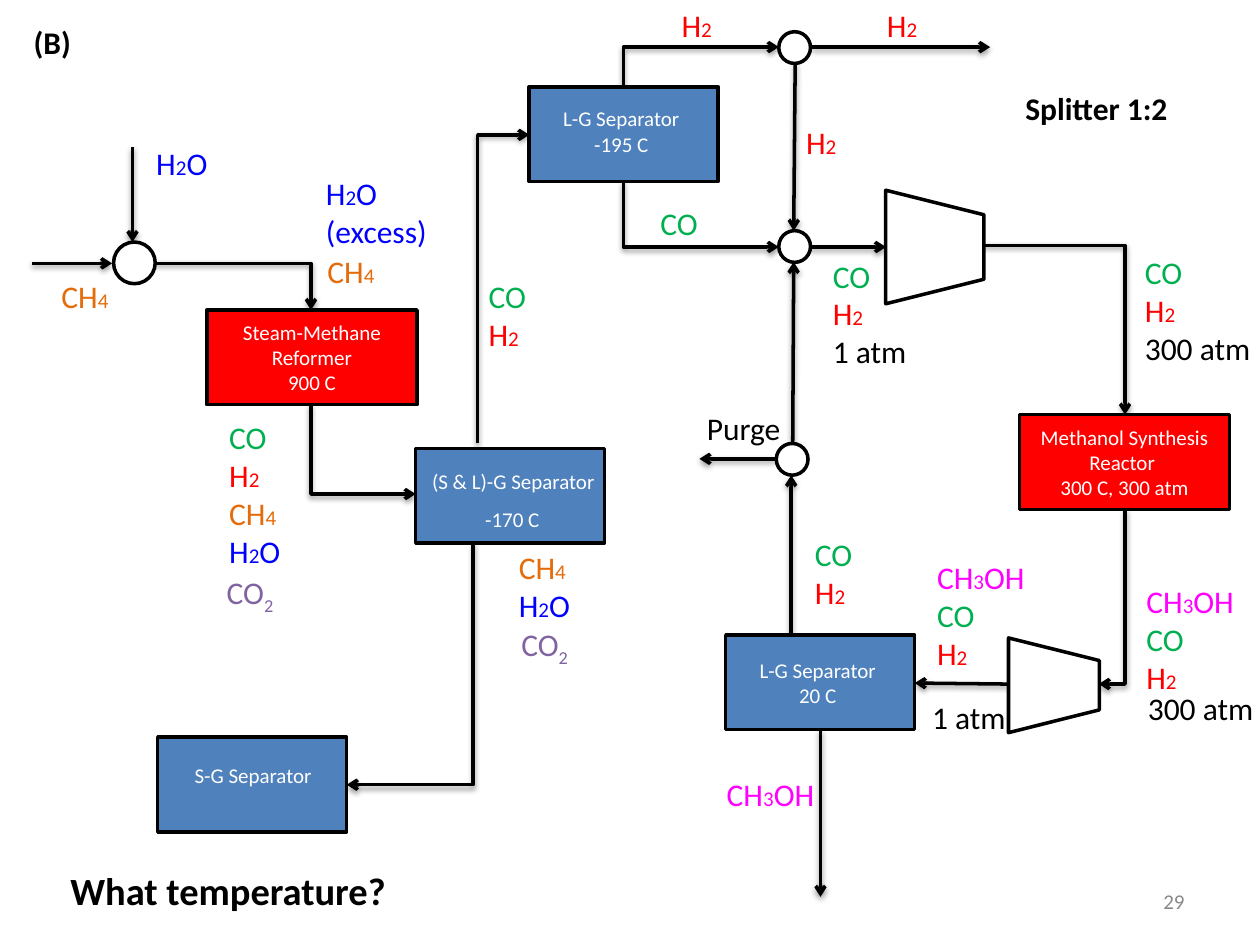
import itertools

import pptx
import pptx.dml.color
import pptx.enum.shapes
import pptx.enum.text
import pptx.oxml.ns
import pptx.util
from lxml import etree

Cm, Pt = pptx.util.Cm, pptx.util.Pt
RGBColor = pptx.dml.color.RGBColor
MSO = pptx.enum.shapes.MSO_SHAPE
CONN = pptx.enum.shapes.MSO_CONNECTOR
PP = pptx.enum.text.PP_ALIGN
MIDDLE = pptx.enum.text.MSO_ANCHOR.MIDDLE
qn = pptx.oxml.ns.qn

BLACK = RGBColor(0x00, 0x00, 0x00)
WHITE = RGBColor(0xFF, 0xFF, 0xFF)
RED = RGBColor(0xFF, 0x00, 0x00)
STEEL = RGBColor(0x4F, 0x81, 0xBD)
BLUE = RGBColor(0x00, 0x00, 0xFF)
ORANGE = RGBColor(0xE4, 0x6C, 0x0A)
GREEN = RGBColor(0x00, 0xB0, 0x50)
MAGENTA = RGBColor(0xFF, 0x00, 0xFF)
PURPLE = RGBColor(0x80, 0x64, 0xA2)
GREY = RGBColor(0x89, 0x89, 0x89)
SPECIES = {"H2O": BLUE, "H2O (excess)": BLUE, "CH4": ORANGE, "CO": GREEN,
           "H2": RED, "CH3OH": MAGENTA, "CO2": PURPLE}

prs = pptx.Presentation()
prs.slide_width, prs.slide_height = Cm(25.4), Cm(19.05)
s = prs.slides.add_slide(prs.slide_layouts[6])


def write(tf, lines, color=BLACK, align=PP.LEFT, size=18, bold=False):
    tf.word_wrap = True
    for i, line in enumerate(lines):
        p = tf.paragraphs[0] if i == 0 else tf.add_paragraph()
        p.alignment = align
        parts = [line]
        if line in SPECIES:
            parts = ["".join(g) for _, g in itertools.groupby(line, str.isdigit)]
        for part in parts:
            r = p.add_run()
            r.text = part
            index = line in SPECIES and part.isdigit()
            fmt = {"name": "Calibri", "size": Pt(size), "bold": bold}
            if index and line == "CO2":
                r.font._element.set("baseline", "-25000")
            elif index:
                fmt["size"] = Pt(12)
            for k, v in fmt.items():
                setattr(r.font, k, v)
            r.font.color.rgb = SPECIES.get(line, color)


def arrow(kind, x1, y1, x2, y2):
    if kind == "down_first":
        turn = 270 if x2 > x1 and y2 > y1 else 90
        k = 1 if turn == 90 else -1
        cx, cy = (x1 + x2) / 2, (y1 + y2) / 2
        dx, dy = k * (y1 - y2) / 2, k * (x2 - x1) / 2
        x1, y1, x2, y2 = cx + dx, cy + dy, cx - dx, cy - dy
    c = s.shapes.add_connector(CONN.STRAIGHT if kind == "straight" else CONN.ELBOW,
                               Cm(x1), Cm(y1), Cm(x2), Cm(y2))
    spPr = c._element.spPr
    if kind != "straight":
        spPr.find(qn("a:prstGeom")).set("prst", "bentConnector2")
    if kind == "down_first":
        spPr.find(qn("a:xfrm")).set("rot", str(turn * 60000))
    c.line.color.rgb = BLACK
    c.line.width = Pt(2)
    etree.SubElement(spPr.find(qn("a:ln")), qn("a:tailEnd"), type="arrow")


ARROWS = {
    "straight": [
        (2.67, 2.97, 2.67, 4.88), (0.64, 5.31, 2.26, 5.31),
        (15.98, 8.99, 16, 5.28), (20.32, 13.79, 18.44, 13.77),
        (15.95, 12.85, 15.95, 9.58), (15.65, 9.25, 14.1, 9.25),
        (16.31, 4.98, 17.86, 4.98), (16.36, 0.95, 19.96, 0.95),
        (16.03, 1.27, 16, 4.65), (16.54, 14.71, 16.54, 18.08)],
    "across_first": [(3.1, 5.31, 6.27, 6.25), (18.34, 4.95, 22.68, 8.36)],
    "down_first": [
        (6.27, 8.15, 8.38, 9.96), (22.68, 10.26, 22.15, 13.79),
        (9.63, 8.94, 10.67, 2.72), (12.57, 1.75, 15.7, 0.95),
        (12.57, 3.66, 15.7, 4.98), (9.53, 10.95, 6.99, 15.82)],
}
for kind, ends in ARROWS.items():
    for end in ends:
        arrow(kind, *end)

UNITS = [
    (MSO.RECTANGLE, 4.17, 6.25, 4.24, 1.91, RED, 0, ["Steam-Methane Reformer", "900 C"]),
    (MSO.RECTANGLE, 20.55, 8.36, 4.24, 1.91, RED, 0,
     ["Methanol Synthesis Reactor ", "300 C, 300 atm"]),
    (MSO.RECTANGLE, 14.63, 12.8, 3.81, 1.91, STEEL, 0, []),
    (MSO.RECTANGLE, 8.38, 9.04, 3.81, 1.91, STEEL, 0, []),
    (MSO.RECTANGLE, 10.67, 1.75, 3.81, 1.91, STEEL, 0, []),
    (MSO.RECTANGLE, 3.18, 14.86, 3.81, 1.91, STEEL, 0, []),
    (MSO.TRAPEZOID, 17.7, 3.99, 2.29, 1.98, WHITE, 90, []),
    (MSO.TRAPEZOID, 20.29, 12.9, 1.91, 1.83, WHITE, 90, []),
    (MSO.OVAL, 15.7, 4.65, 0.64, 0.64, WHITE, 0, []),
    (MSO.OVAL, 15.65, 8.94, 0.64, 0.64, WHITE, 0, []),
    (MSO.OVAL, 15.7, 0.64, 0.64, 0.64, WHITE, 0, []),
    (MSO.FLOWCHART_CONNECTOR, 2.29, 4.88, 0.84, 0.84, WHITE, 0, []),
]
for shape, x, y, w, h, fill, turn, lines in UNITS:
    sp = s.shapes.add_shape(shape, Cm(x), Cm(y), Cm(w), Cm(h))
    sp.shadow.inherit = False
    sp.rotation = turn
    sp.fill.solid()
    sp.fill.fore_color.rgb = fill
    sp.line.color.rgb = BLACK
    sp.line.width = Pt(2)
    write(sp.text_frame, lines, WHITE, PP.CENTER, 12)

UNIT = {"color": WHITE, "size": 12}
UNIT_MID = {**UNIT, "align": PP.CENTER}
LABELS = [
    (2.9, 2.77, 2.11, 1.02, ["H2O"], {}),
    (0.99, 5.46, 2.11, 1.02, ["CH4"], {}),
    (6.32, 3.38, 2.59, 1.8, ["H2O (excess)"], {}),
    (6.35, 4.95, 2.01, 1.02, ["CH4"], {}),
    (4.37, 8.31, 1.91, 3.33, ["CO", "H2", "CH4", "H2O"], {}),
    (4.32, 11.43, 1.91, 1.02, ["CO2"], {}),
    (16.54, 5.05, 2.34, 2.57, ["CO", "H2", "1 atm"], {}),
    (22.86, 11.61, 2.54, 2.57, ["CH3OH", "CO", "H2"], {}),
    (22.89, 13.77, 2.87, 1.02, ["300 atm"], {}),
    (22.83, 4.98, 2.79, 2.57, ["CO", "H2", "300 atm"], {}),
    (18.64, 11.13, 2.54, 2.57, ["CH3OH", "CO", "H2"], {}),
    (18.54, 13.94, 2.87, 1.02, ["1 atm"], {}),
    (16.18, 10.67, 1.47, 1.78, ["CO", "H2"], {}),
    (14.4, 15.49, 2.74, 1.02, ["CH3OH"], {}),
    (12.52, 3.99, 2.34, 1.02, ["CO"], {"align": PP.CENTER}),
    (14, 8.13, 2.87, 1.02, ["Purge"], {}),
    (13.49, 0, 1.27, 1.02, ["H2"], {}),
    (17.63, 0, 1.27, 1.02, ["H2"], {}),
    (16, 2.36, 1.27, 1.02, ["H2"], {}),
    (9.6, 5.46, 2.34, 1.8, ["CO", "H2"], {}),
    (10.21, 10.92, 1.91, 1.8, ["CH4", "H2O"], {}),
    (10.26, 12.47, 1.91, 1.02, ["CO2"], {}),
    (8.46, 9.32, 4, 0.76, ["(S & L)-G Separator"], UNIT),
    (9.53, 10.08, 2.01, 0.76, ["-170 C"], UNIT),
    (14.58, 13.13, 3.81, 1.3, ["L-G Separator", "20 C"], UNIT_MID),
    (10.62, 2.01, 3.81, 1.27, ["L-G Separator", "-195 C"], UNIT_MID),
    (3.2, 15.24, 3.81, 0.76, ["S-G Separator"], UNIT_MID),
    (20.42, 1.68, 4.37, 1.02, ["Splitter 1:2"], {"bold": True}),
    (0.43, 0.33, 1.47, 1.02, ["(B)"], {"bold": True}),
    (1.17, 17.35, 14.4, 1.19, ["What temperature?"], {"bold": True, "size": 22}),
    (18.21, 17.65, 5.92, 1.02, ["29"], {"color": GREY, "align": PP.RIGHT, "size": 12}),
]
for x, y, w, h, lines, fmt in LABELS:
    sp = s.shapes.add_textbox(Cm(x), Cm(y), Cm(w), Cm(h))
    write(sp.text_frame, lines, **fmt)
sp.text_frame.vertical_anchor = MIDDLE

prs.save("out.pptx")
